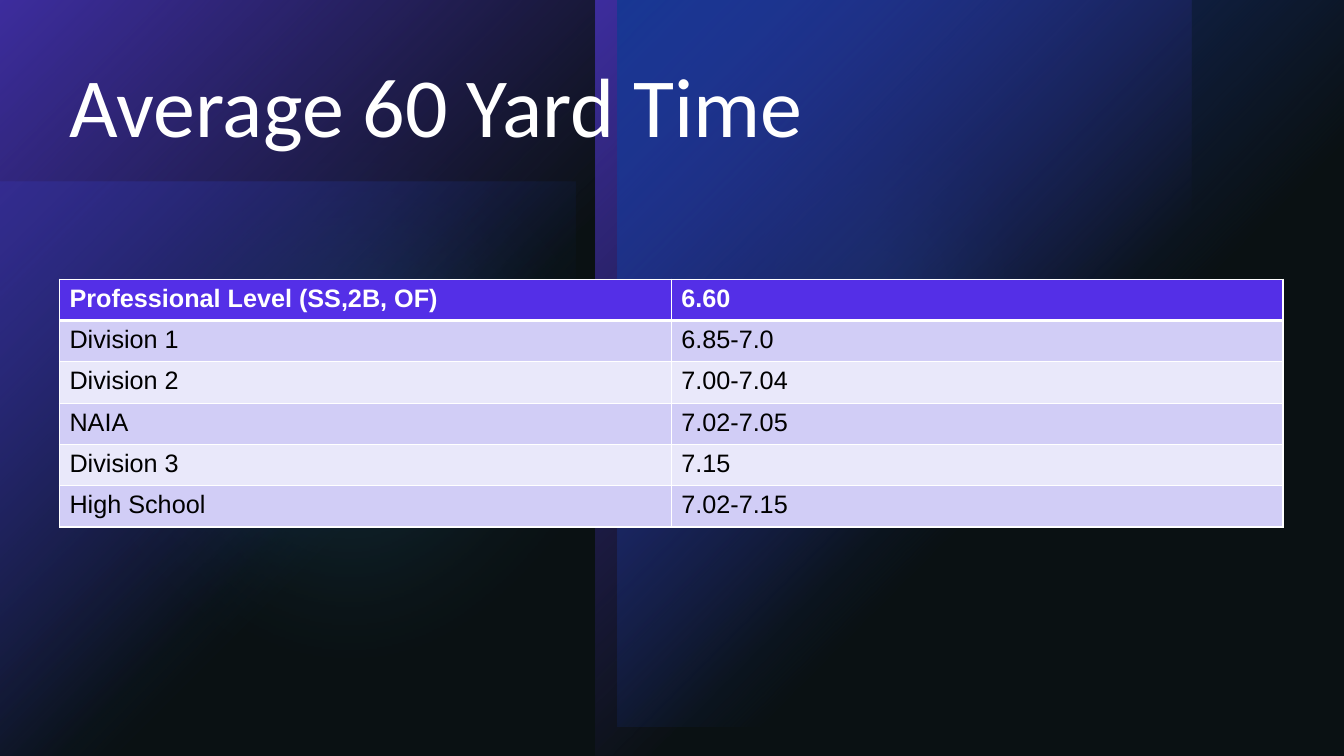
"""Builds the slide on average 60 yard times."""
from lxml.etree import SubElement
from pptx import Presentation
from pptx.dml.color import RGBColor
from pptx.enum.shapes import MSO_SHAPE
from pptx.enum.text import MSO_ANCHOR
from pptx.oxml import parse_xml
from pptx.oxml.ns import nsdecls, qn
from pptx.util import Pt

TITLE = "Average 60 Yard Time"
TIMES = [
    ("Professional Level (SS,2B, OF)", "6.60"),
    ("Division 1", "6.85-7.0"),
    ("Division 2", "7.00-7.04"),
    ("NAIA", "7.02-7.05"),
    ("Division 3", "7.15"),
    ("High School", "7.02-7.15"),
]
THEME = {
    "back": "000000", "white": "FFFFFF", "black": "000000",
    "blue": "1740D5", "sky": "29A1E7", "violet": "542FE7", "veil": "1B2B30",
    "bands": ("E9E8FA", "D1CDF6"),
    "head": "Calibri", "body": "Arial", "big": 60, "small": 18,
}
WIDE, HIGH = 960, 540
LEFT, SPAN = 42.5, 874
ROW = 29.5
BLUR = 100
GLOWS = [
    ("fade", (0, 129.5, 411, 411), "blue", 60),
    ("soft", (453, 31, 340, 340), "sky", 60),
    ("soft", (0, 40.5, 499.5, 499.5), "sky", 20),
    ("fade", (0, 0, 425.5, HIGH), "violet", 100),
    ("fade", (425.5, 0, 425.5, HIGH), "violet", 100),
    ("fade", (441, 0, 519, 519), "blue", 100),
    ("flat", (0, 0, WIDE, HIGH), "veil", 40),
]


def tint(name):
    return RGBColor.from_string(THEME.get(name, name))


def write(frame, text, font="body", size="small", color="black", bold=False, lead=None):
    para = frame.paragraphs[0]
    para.line_spacing = lead
    run = para.add_run()
    run.text = text
    run.font.name, run.font.size = THEME[font], Pt(THEME[size])
    run.font.color.rgb, run.font.bold = tint(color), bold


def fade(shape, color, alpha):
    stops = "".join(
        f'<a:gs pos="{pos}"><a:srgbClr val="{THEME[color]}">'
        f'<a:alpha val="{level * 1000}"/></a:srgbClr></a:gs>'
        for pos, level in ((0, alpha), (60000, 0))
    )
    grad = parse_xml(
        f'<a:gradFill {nsdecls("a")} rotWithShape="1"><a:gsLst>{stops}</a:gsLst>'
        '<a:path path="circle"><a:fillToRect r="100000" b="100000"/></a:path></a:gradFill>'
    )
    old = shape._element.spPr.find(qn("a:solidFill"))
    old.getparent().replace(old, grad)


def glow(slide, kind, box, color, alpha):
    form = MSO_SHAPE.OVAL if kind == "soft" else MSO_SHAPE.RECTANGLE
    shape = slide.shapes.add_shape(form, *map(Pt, box))
    shape.shadow.inherit = False
    shape.line.fill.background()
    shape.fill.solid()
    shape.fill.fore_color.rgb = tint(color)
    props = shape._element.spPr
    if kind == "fade":
        fade(shape, color, alpha)
        return
    hue = props.find(qn("a:solidFill")).find(qn("a:srgbClr"))
    SubElement(hue, qn("a:alpha"), val=str(alpha * 1000))
    if kind == "soft":
        SubElement(props.find(qn("a:effectLst")), qn("a:softEdge"), rad=str(Pt(BLUR)))


def edge(cell, side, width):
    line = parse_xml(
        f'<a:{side} {nsdecls("a")} w="{Pt(width)}"><a:solidFill>'
        f'<a:srgbClr val="{THEME["white"]}"/></a:solidFill></a:{side}>'
    )
    props = cell._tc.get_or_add_tcPr()
    props.insert(len(props.findall("*")) - 1, line)


def chart(slide):
    grid = slide.shapes.add_table(
        len(TIMES), 2, Pt(LEFT), Pt(199.5), Pt(SPAN), Pt(ROW * len(TIMES))
    ).table
    for col in grid.columns:
        col.width = Pt(SPAN / 2)
    for r, pair in enumerate(TIMES):
        grid.rows[r].height = Pt(ROW)
        top = r == 0
        for c, text in enumerate(pair):
            cell = grid.cell(r, c)
            cell.fill.solid()
            cell.fill.fore_color.rgb = tint("violet" if top else THEME["bands"][r % 2])
            write(cell.text_frame, text, color="white" if top else "black", bold=top)
            for side in ("lnL", "lnR", "lnT", "lnB"):
                thick = (top and side == "lnB") or (r == 1 and side == "lnT")
                edge(cell, side, 3 if thick else 1)


def main():
    deck = Presentation()
    deck.slide_width, deck.slide_height = Pt(WIDE), Pt(HIGH)
    slide = deck.slides.add_slide(deck.slide_layouts[6])
    slide.background.fill.solid()
    slide.background.fill.fore_color.rgb = tint("back")
    for item in GLOWS:
        glow(slide, *item)
    frame = slide.shapes.add_textbox(Pt(LEFT), Pt(LEFT), Pt(SPAN), Pt(142.5)).text_frame
    frame.word_wrap, frame.vertical_anchor = True, MSO_ANCHOR.TOP
    write(frame, TITLE, font="head", size="big", color="white", lead=0.9)
    chart(slide)
    deck.save("out.pptx")


if __name__ == "__main__":
    main()
